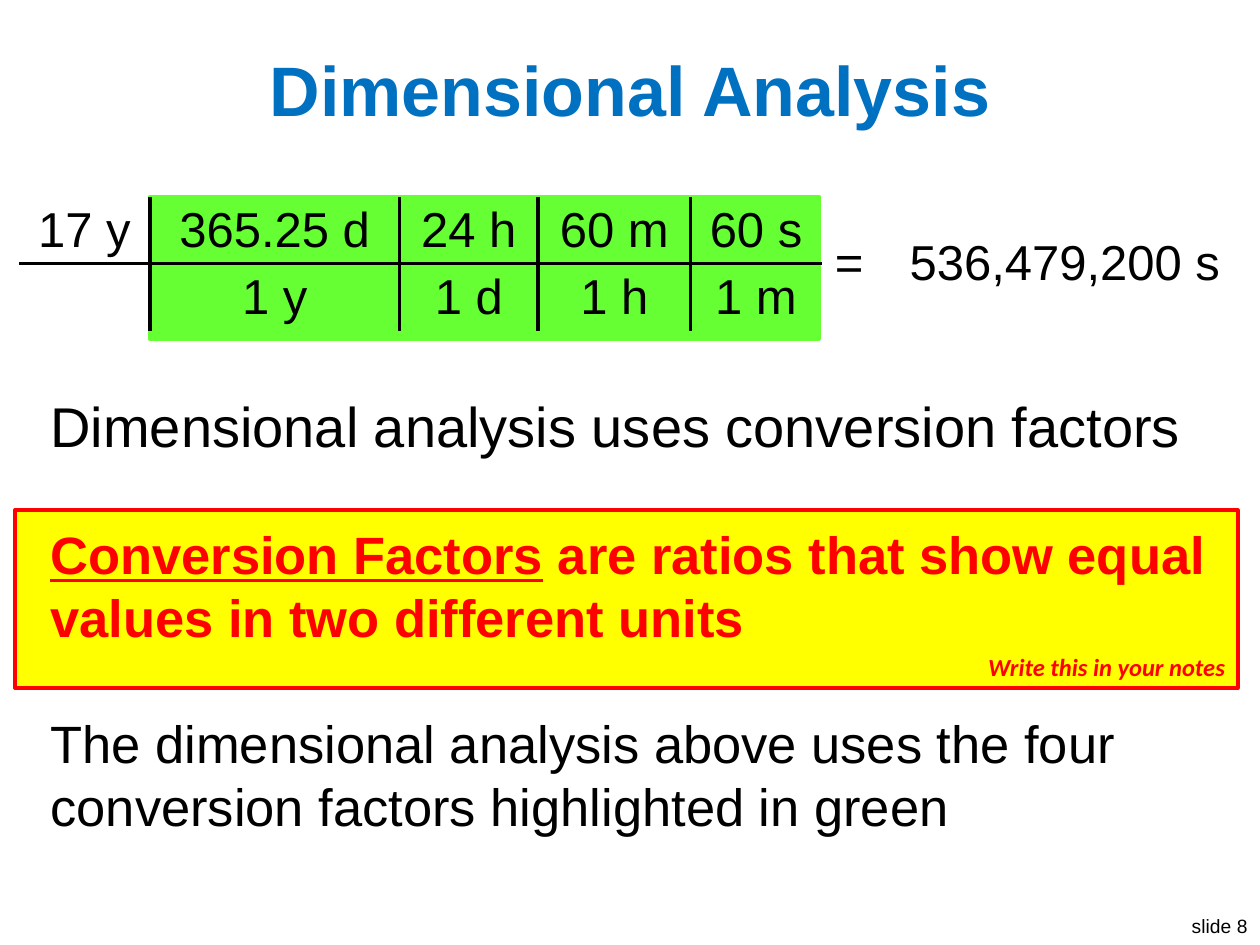
from lxml import etree
from pptx import Presentation
from pptx.dml.color import RGBColor
from pptx.enum.shapes import MSO_SHAPE
from pptx.enum.text import MSO_ANCHOR, MSO_AUTO_SIZE, PP_ALIGN
from pptx.oxml.ns import qn
from pptx.util import Pt

RECTANGLE = MSO_SHAPE.RECTANGLE
TOP, MIDDLE, BOTTOM = MSO_ANCHOR.TOP, MSO_ANCHOR.MIDDLE, MSO_ANCHOR.BOTTOM
LEFT, CENTER, RIGHT = PP_ALIGN.LEFT, PP_ALIGN.CENTER, PP_ALIGN.RIGHT
FIXED = MSO_AUTO_SIZE.NONE

BLACK, RED, YELLOW, GREEN, BLUE = "000000", "FF0000", "FFFF00", "66FF33", "0070C0"


def color(value):
    return RGBColor.from_string(value)


class SlideBuilder:
    font = "Arial"
    rule_width = 2.25

    def __init__(self, page):
        self.page = page

    def span(self, para, text, size, ink=BLACK, font=None, bold=False, italic=False, underline=False):
        span = para.add_run()
        span.text = text
        span.font.name = font or self.font
        span.font.size = Pt(size)
        span.font.bold = bold
        span.font.italic = italic
        span.font.underline = underline
        span.font.color.rgb = color(ink)

    def rectangle(self, left, top, width, height, fill, line, line_width):
        box = self.page.shapes.add_shape(RECTANGLE, Pt(left), Pt(top), Pt(width), Pt(height))
        box.shadow.inherit = False
        box.fill.solid()
        box.fill.fore_color.rgb = color(fill)
        box.line.color.rgb = color(line)
        box.line.width = Pt(line_width)
        return box

    def label(self, left, top, width, height, text, size):
        box = self.page.shapes.add_textbox(Pt(left), Pt(top), Pt(width), Pt(height))
        box.text_frame.word_wrap = True
        para = box.text_frame.paragraphs[0]
        para.alignment = RIGHT
        self.span(para, text, size)

    def placeholder(self, index, left, top, width, height, anchor):
        box = self.page.placeholders[index]
        box.left, box.top, box.width, box.height = Pt(left), Pt(top), Pt(width), Pt(height)
        box.text_frame.auto_size = FIXED
        box.text_frame.vertical_anchor = anchor
        box.element.getparent().append(box.element)
        return box.text_frame

    def title(self, text, *place):
        para = self.placeholder(0, *place, MIDDLE).paragraphs[0]
        para.alignment = CENTER
        self.span(para, text, 40, BLUE, bold=True)

    def body(self, paragraphs, *place):
        frame = self.placeholder(1, *place, TOP)
        for number, (space, spans) in enumerate(paragraphs):
            para = frame.add_paragraph() if number else frame.paragraphs[0]
            para.alignment = LEFT
            para.space_before = Pt(space)
            for text, size, style in spans:
                self.span(para, text, size, **style)
            properties = para._p.get_or_add_pPr()
            properties.set("marL", "0")
            properties.set("indent", "0")
            etree.SubElement(properties, qn("a:buNone"))

    def borders(self, cell, visible):
        properties = cell._tc.get_or_add_tcPr()
        for side in "LRTB":
            line = etree.SubElement(properties, qn(f"a:ln{side}"), w=str(Pt(self.rule_width)))
            if side in visible:
                fill = etree.SubElement(line, qn("a:solidFill"))
                etree.SubElement(fill, qn("a:srgbClr"), val=BLACK)
            else:
                etree.SubElement(line, qn("a:noFill"))
        cell.fill.background()

    def conversion_table(self, left, top, widths, row_height, rows, factor_columns, size):
        frame = self.page.shapes.add_table(
            len(rows), len(widths), Pt(left), Pt(top), Pt(sum(widths)), Pt(row_height * len(rows)))
        table = frame.table
        table.first_row = table.horz_banding = False
        for column, width in zip(table.columns, widths):
            column.width = Pt(width)
        for row_number, texts in enumerate(rows):
            table.rows[row_number].height = Pt(row_height)
            for column_number, text in enumerate(texts):
                cell = table.cell(row_number, column_number)
                cell.margin_top = cell.margin_bottom = Pt(3)
                cell.vertical_anchor = MIDDLE
                visible = ""
                if column_number < factor_columns:
                    visible = "T" if row_number else "B"
                    visible += "L" if column_number else ""
                    visible += "R" if column_number < factor_columns - 1 else ""
                self.borders(cell, visible)
                if text:
                    para = cell.text_frame.paragraphs[0]
                    para.alignment = CENTER
                    self.span(para, text, size)
        for column_number in range(factor_columns, len(widths)):
            table.cell(0, column_number).merge(table.cell(len(rows) - 1, column_number))


def main():
    deck = Presentation()
    deck.slide_width, deck.slide_height = Pt(720), Pt(540)
    builder = SlideBuilder(deck.slides.add_slide(deck.slide_layouts[1]))

    builder.label(640, 519, 80, 21, "slide 8", 11)
    builder.rectangle(85.7, 112.3, 382.3, 81.4, GREEN, GREEN, 2)

    note = builder.rectangle(8.6, 291.6, 698.8, 101.5, YELLOW, RED, 2.25)
    note.text_frame.vertical_anchor = BOTTOM
    para = note.text_frame.paragraphs[0]
    para.alignment = RIGHT
    builder.span(para, "Write this in your notes", 14, RED, "Calibri", bold=True, italic=True)

    builder.title("Dimensional Analysis", 14.4, 21.6, 691.2, 57.6)
    key = {"ink": RED, "bold": True}
    builder.body([
        (12, [("Dimensional analysis uses conversion factors", 32, {})]),
        (36, [("Conversion Factors", 30, {**key, "underline": True}),
              (" are ratios that show equal values in two different units", 30, key)]),
        (36, [("The dimensional analysis above uses the four conversion factors "
               "highlighted in green", 30, {})]),
    ], 21.6, 220.3, 676.8, 285.1)

    builder.conversion_table(
        10.8, 112.3, [74.9, 142.6, 79.2, 87.1, 74.9, 31.7, 214.6], 38.3,
        [["17 y", "365.25 d", "24 h", "60 m", "60 s", "=", "536,479,200 s"],
         ["", "1 y", "1 d", "1 h", "1 m", "", ""]],
        factor_columns=5, size=28)

    deck.save("out.pptx")


if __name__ == "__main__":
    main()
